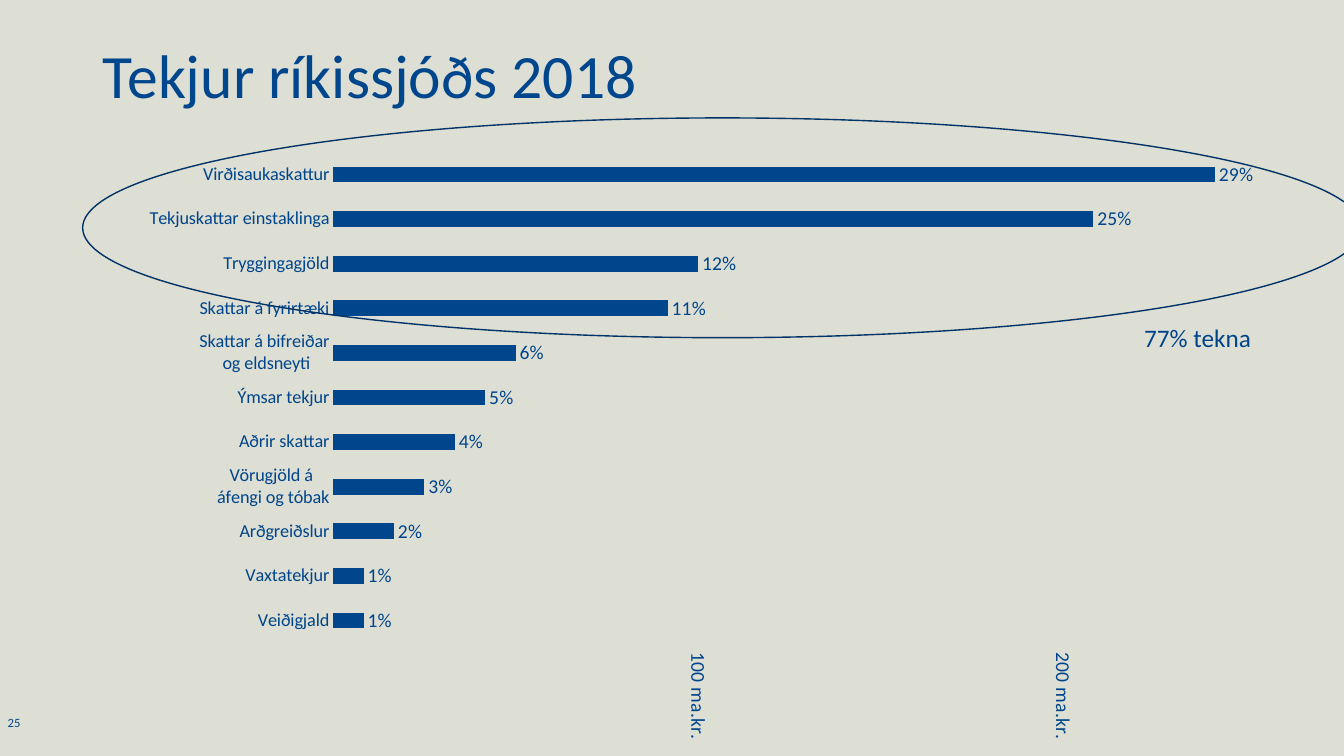
"""Build the slide on Icelandic treasury revenue in 2018."""
from copy import deepcopy
from dataclasses import dataclass

from lxml import etree
from pptx import Presentation
from pptx import util as u
from pptx.chart.data import CategoryChartData
from pptx.dml.color import RGBColor
from pptx.enum import chart as ch, dml, shapes, text
from pptx.oxml import ns

HEADING = "Tekjur ríkissjóðs 2018"
CALLOUT = "77% tekna"
PAGE = "25"
REVENUE = [
    ("Veiðigjald", 10000, 0.01),
    ("Vaxtatekjur", 12000, 0.01),
    ("Arðgreiðslur", 19000, 0.02),
    ("Vörugjöld á \náfengi og tóbak", 25000, 0.03),
    ("Aðrir skattar", 37000, 0.04),
    ("Ýmsar tekjur", 41000, 0.05),
    ("Skattar á bifreiðar\n og eldsneyti", 52000, 0.06),
    ("Skattar á fyrirtæki", 92000, 0.11),
    ("Tryggingagjöld", 99000, 0.12),
    ("Tekjuskattar einstaklinga", 208000, 0.25),
    ("Virðisaukaskattur", 239000, 0.29),
]
AMOUNT_FORMAT = '##\\ "ma.kr.";\\-##;;'
AMOUNT_MAX, AMOUNT_STEP, SHARE_MAX = 250, 100, 0.3
PLOT = {"x": 0.2, "y": 0.08, "w": 0.782, "h": 0.763}
WIDTH, HEIGHT = 13.33, 7.5
AREAS = {
    "heading": (0.069, 0.053, 0.863, 0.149),
    "chart": (0.0743, 0.1333, 0.868, 0.8507),
    "ring": (0.0615, 0.156, 0.952, 0.2907),
    "callout": (0.844, 0.42, 0.1215, 0.0533),
    "page": (0, 0.9453, 0.021, 0.0347),
}


@dataclass(frozen=True)
class Theme:
    font: str = "Calibri"
    ground: str = "DDDED4"
    grid: str = "DDDED5"
    ink: str = "00468C"
    label: str = "00458B"
    axis: str = "C7E3FF"
    ring: str = "003367"
    heading_size: int = 44
    callout_size: int = 18
    chart_size: int = 14
    category_size: int = 13
    page_size: int = 9


THEME = Theme()


def area(part):
    """Turn shares of the slide into lengths."""
    sides = (WIDTH, HEIGHT, WIDTH, HEIGHT)
    return [u.Inches(share * side) for share, side in zip(AREAS[part], sides)]


def style_font(font, size, color):
    font.name, font.size = THEME.font, u.Pt(size)
    font.color.rgb = RGBColor.from_string(color)


def style_line(line, color, width):
    line.color.rgb = RGBColor.from_string(color)
    line.width = u.Pt(width)


def write(holder, words, *, size, color, align=text.PP_ALIGN.LEFT, spacing=1.0, inset=None):
    frame = holder.text_frame
    frame.word_wrap = True
    frame.auto_size = text.MSO_AUTO_SIZE.NONE
    frame.vertical_anchor = text.MSO_ANCHOR.TOP
    if inset is not None:
        frame.margin_left = frame.margin_right = inset
        frame.margin_top = frame.margin_bottom = inset
    paragraph = frame.paragraphs[0]
    paragraph.alignment, paragraph.line_spacing = align, spacing
    run = paragraph.add_run()
    run.text = words
    style_font(run.font, size, color)


def node(parent, tag, val):
    return etree.SubElement(parent, ns.qn(tag), val=str(val))


def place_plot(plot_area):
    """Fix the inner plot area at set shares of the chart."""
    for old in plot_area.findall(ns.qn("c:layout")):
        plot_area.remove(old)
    layout = etree.Element(ns.qn("c:layout"))
    plot_area.insert(0, layout)
    manual = etree.SubElement(layout, ns.qn("c:manualLayout"))
    node(manual, "c:layoutTarget", "inner")
    for side in "xy":
        node(manual, f"c:{side}Mode", "edge")
    for side, share in PLOT.items():
        node(manual, f"c:{side}", share)


def add_share_axis(plot_area):
    """Move the second series to its own bars and axes."""
    bars = plot_area.find(ns.qn("c:barChart"))
    share_bars = deepcopy(bars)
    bars.addnext(share_bars)
    bars.remove(bars.findall(ns.qn("c:ser"))[1])
    share_bars.remove(share_bars.find(ns.qn("c:ser")))
    ids = ("50010", "50020")
    for ref, new_id in zip(share_bars.findall(ns.qn("c:axId")), ids):
        ref.set("val", new_id)
    categories = deepcopy(plot_area.find(ns.qn("c:catAx")))
    amounts = plot_area.find(ns.qn("c:valAx"))
    shares = deepcopy(amounts)
    for axis, own, other in ((categories, *ids), (shares, *ids[::-1])):
        axis.find(ns.qn("c:axId")).set("val", own)
        axis.find(ns.qn("c:crossAx")).set("val", other)
    categories.find(ns.qn("c:delete")).set("val", "1")
    shares.remove(shares.find(ns.qn("c:majorGridlines")))
    shares.remove(shares.find(ns.qn("c:majorUnit")))
    for tag, val in (("axPos", "t"), ("majorTickMark", "out"),
                     ("tickLblPos", "none"), ("crosses", "max")):
        shares.find(ns.qn(f"c:{tag}")).set("val", val)
    shares.find(ns.qn("c:scaling")).find(ns.qn("c:max")).set("val", str(SHARE_MAX))
    amounts.addnext(shares)
    shares.addnext(categories)


def add_revenue_chart(slide):
    names, amounts, shares = zip(*REVENUE)
    data = CategoryChartData()
    data.categories = names
    data.add_series("Series 1", amounts)
    data.add_series("Series 2", shares, number_format="0%")
    chart = slide.shapes.add_chart(
        ch.XL_CHART_TYPE.BAR_CLUSTERED, *area("chart"), data).chart
    chart.has_legend = chart.has_title = False
    style_font(chart.font, THEME.chart_size, THEME.label)
    bars = chart.plots[0]
    bars.gap_width, bars.vary_by_categories = 182, False
    amount_series, share_series = bars.series
    amount_series.format.fill.background()
    amount_series.format.line.fill.background()
    share_series.format.fill.solid()
    share_series.format.fill.fore_color.rgb = RGBColor.from_string(THEME.ink)
    labels = share_series.data_labels
    labels.show_value = True
    labels.number_format, labels.number_format_is_linked = "0%", False
    labels.position = ch.XL_LABEL_POSITION.OUTSIDE_END
    style_font(labels.font, THEME.chart_size, THEME.label)

    category_axis, amount_axis = chart.category_axis, chart.value_axis
    for axis, size in ((category_axis, THEME.category_size), (amount_axis, THEME.chart_size)):
        axis.major_tick_mark = axis.minor_tick_mark = ch.XL_TICK_MARK.NONE
        style_font(axis.tick_labels.font, size, THEME.label)
    style_line(category_axis.format.line, THEME.axis, 0.75)
    amount_axis.format.line.fill.background()
    amount_axis.minimum_scale, amount_axis.maximum_scale = 0, AMOUNT_MAX
    amount_axis.major_unit = AMOUNT_STEP
    amount_axis.tick_label_position = ch.XL_TICK_LABEL_POSITION.LOW
    ticks = amount_axis.tick_labels
    ticks.number_format, ticks.number_format_is_linked = AMOUNT_FORMAT, False
    grid = amount_axis.major_gridlines.format.line
    style_line(grid, THEME.grid, 0.75)
    grid.dash_style = dml.MSO_LINE.LONG_DASH

    plot_area = chart.element.find(".//" + ns.qn("c:plotArea"))
    amount_text = plot_area.find(ns.qn("c:valAx")).find(ns.qn("c:txPr"))
    amount_text.find(ns.qn("a:bodyPr")).set("rot", "5400000")
    place_plot(plot_area)
    add_share_axis(plot_area)


def main():
    deck = Presentation()
    deck.slide_width, deck.slide_height = u.Inches(WIDTH), u.Inches(HEIGHT)
    slide = deck.slides.add_slide(deck.slide_layouts[5])
    slide.background.fill.solid()
    slide.background.fill.fore_color.rgb = RGBColor.from_string(THEME.ground)

    heading = slide.shapes.title
    heading.left, heading.top, heading.width, heading.height = area("heading")
    write(heading, HEADING, size=THEME.heading_size, color=THEME.ink, spacing=0.9)
    add_revenue_chart(slide)

    ring = slide.shapes.add_shape(shapes.MSO_SHAPE.OVAL, *area("ring"))
    ring.shadow.inherit = False
    ring.fill.background()
    style_line(ring.line, THEME.ring, 1)

    write(slide.shapes.add_textbox(*area("callout")), CALLOUT,
          size=THEME.callout_size, color=THEME.label)
    write(slide.shapes.add_textbox(*area("page")), PAGE, size=THEME.page_size,
          color=THEME.ink, align=text.PP_ALIGN.CENTER, inset=0)
    deck.save("out.pptx")


if __name__ == "__main__":
    main()
